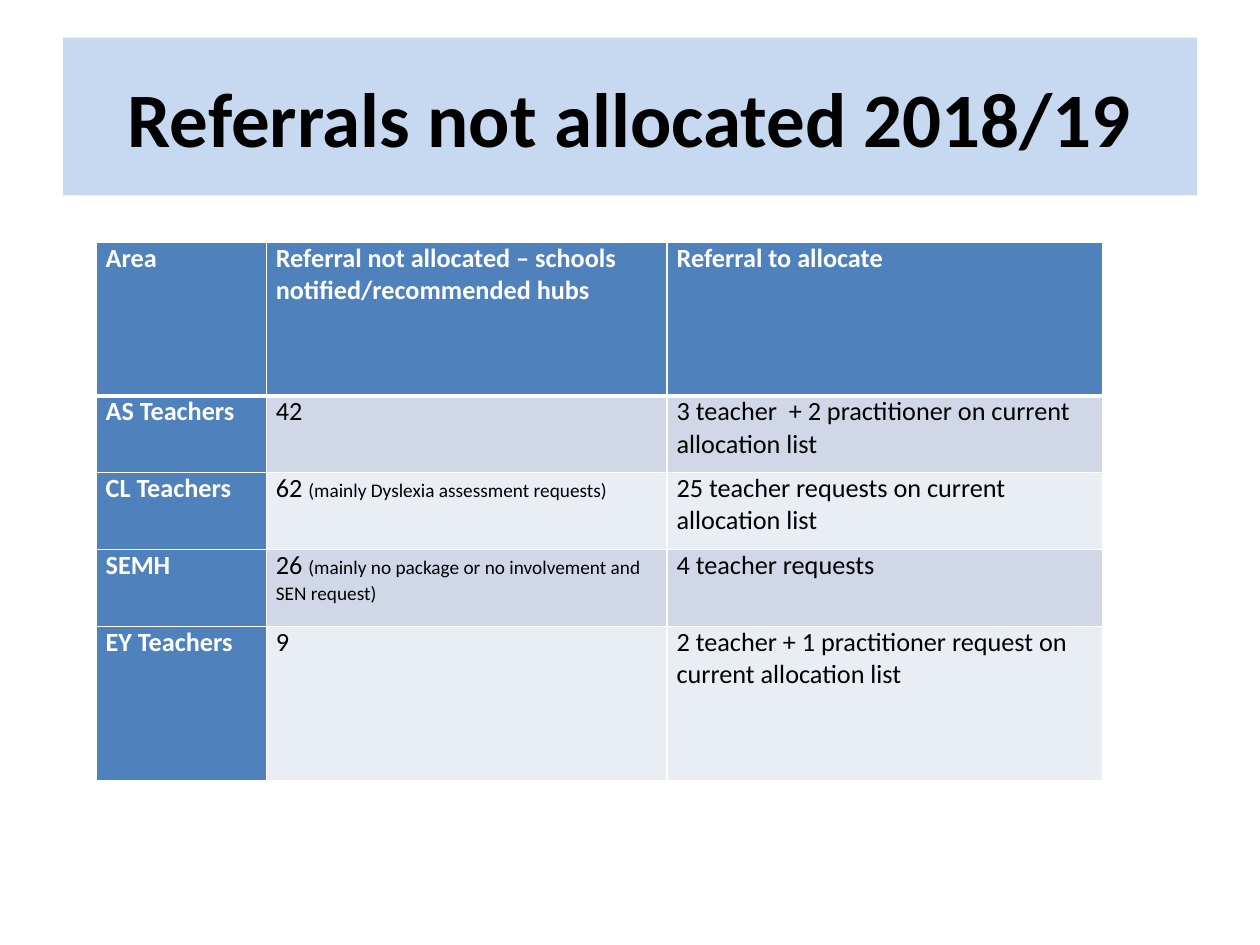
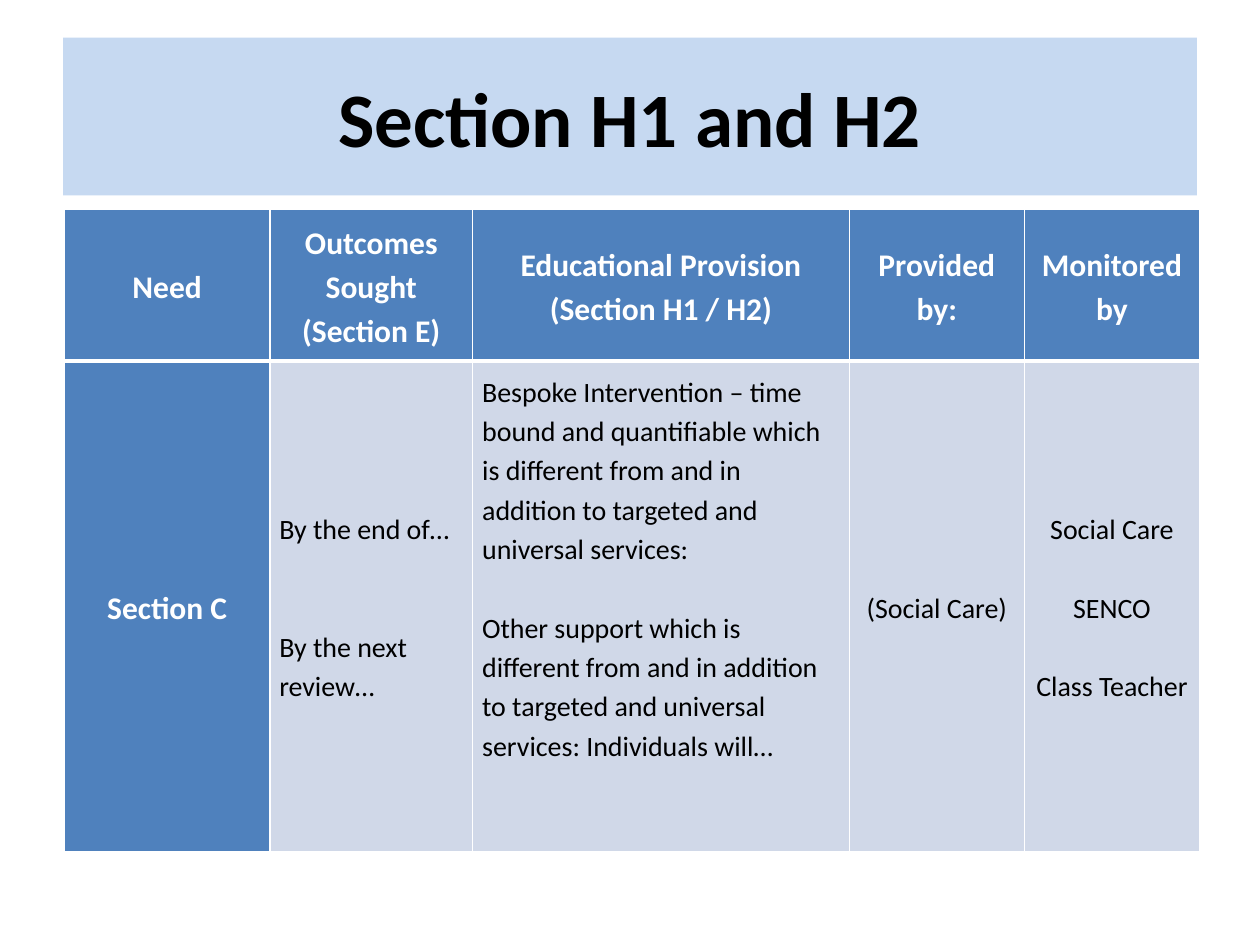
from dataclasses import dataclass
from typing import Any

from lxml.etree import SubElement
from pptx import Presentation
from pptx.dml.color import RGBColor
from pptx.enum.text import MSO_ANCHOR, PP_ALIGN
from pptx.oxml.ns import qn
from pptx.slide import Slide
from pptx.table import _Cell
from pptx.util import Cm, Pt

FONT = "Calibri"
BAND = "C6D9F1"
HEADING = "4F81BD"
STRIPES = ("D0D8E8", "E9EDF4")
WHITE = "FFFFFF"
BLACK = "000000"
INSET = 0.19
SINGLE_LINE = 1.22


@dataclass(frozen=True)
class Run:
    text: str
    size: float | None = None


@dataclass(frozen=True)
class Para:
    runs: tuple[Run, ...]
    lines_before: int = 0


@dataclass(frozen=True)
class Entry:
    paras: tuple[Para, ...]
    centred: bool = False
    lines_below: int = 0


@dataclass(frozen=True)
class Grid:
    left: float
    top: float
    widths: tuple[float, ...]
    heights: tuple[float, ...]
    rows: tuple[tuple[Entry, ...], ...]
    heading_size: float
    body_size: float
    spacing: float
    anchor: MSO_ANCHOR
    inset_vertical: float


@dataclass(frozen=True)
class Page:
    title: str
    grid: Grid


def colour(code: str) -> RGBColor:
    return RGBColor.from_string(code)


def assign(target: Any, values: dict[str, Any]) -> None:
    for name, value in values.items():
        setattr(target, name, value)


def paint(target: Any, code: str) -> None:
    target.fill.solid()
    target.fill.fore_color.rgb = colour(code)


def style_font(font: Any, size: float, code: str, bold: bool) -> None:
    assign(font, {"name": FONT, "size": Pt(size), "bold": bold})
    font.color.rgb = colour(code)


def plain(*lines: str, centred: bool = False, gap: int = 0, lines_below: int = 0) -> Entry:
    paras = tuple(Para((Run(line),), gap if i else 0) for i, line in enumerate(lines))
    return Entry(paras, centred, lines_below)


def noted(count: str, note: str) -> Entry:
    return Entry((Para((Run(f"{count} "), Run(note, 11))),))


def centre(*lines: str, gap: int = 0) -> Entry:
    return plain(*lines, centred=True, gap=gap)


def add_borders(cell: _Cell, row: int) -> None:
    properties = cell._tc.get_or_add_tcPr()
    widths = {"lnL": 1, "lnR": 1, "lnT": 3 if row == 1 else 1, "lnB": 3 if row == 0 else 1}
    for edge, width in widths.items():
        line = SubElement(properties, qn(f"a:{edge}"), w=str(Pt(width)))
        SubElement(SubElement(line, qn("a:solidFill")), qn("a:srgbClr"), val=WHITE)


def fill_cell(cell: _Cell, entry: Entry, grid: Grid, row: int, column: int) -> None:
    heading = row == 0 or column == 0
    size = grid.heading_size if heading else grid.body_size
    line_height = Pt(size * SINGLE_LINE * grid.spacing)
    add_borders(cell, row)
    paint(cell, HEADING if heading else STRIPES[(row - 1) % 2])
    assign(cell, {
        "margin_left": Cm(INSET),
        "margin_right": Cm(INSET),
        "margin_top": Cm(grid.inset_vertical),
        "margin_bottom": Cm(grid.inset_vertical) + entry.lines_below * line_height,
        "vertical_anchor": grid.anchor,
    })
    frame = cell.text_frame
    for i, para in enumerate(entry.paras):
        paragraph = frame.add_paragraph() if i else frame.paragraphs[0]
        assign(paragraph, {
            "alignment": PP_ALIGN.CENTER if entry.centred else PP_ALIGN.LEFT,
            "line_spacing": grid.spacing,
            "space_before": para.lines_before * line_height,
        })
        for piece in para.runs:
            run = paragraph.add_run()
            run.text = piece.text
            style_font(run.font, piece.size or size, WHITE if heading else BLACK, heading)


def add_title(slide: Slide, text: str) -> None:
    title = slide.shapes.title
    assign(title, {"left": Cm(1.27), "top": Cm(0.76), "width": Cm(22.86), "height": Cm(3.18)})
    paint(title, BAND)
    frame = title.text_frame
    assign(frame, {"text": text, "word_wrap": True, "vertical_anchor": MSO_ANCHOR.MIDDLE})
    heading = frame.paragraphs[0]
    heading.alignment = PP_ALIGN.CENTER
    style_font(heading.runs[0].font, 44, BLACK, True)


def add_grid(slide: Slide, grid: Grid) -> None:
    table = slide.shapes.add_table(
        len(grid.heights), len(grid.widths), Cm(grid.left), Cm(grid.top),
        Cm(sum(grid.widths)), Cm(sum(grid.heights)),
    ).table
    for column, width in zip(table.columns, grid.widths):
        column.width = Cm(width)
    for row, height in zip(table.rows, grid.heights):
        row.height = Cm(height)
    for r, entries in enumerate(grid.rows):
        for c, entry in enumerate(entries):
            fill_cell(table.cell(r, c), entry, grid, r, c)


REFERRALS = Grid(
    left=1.94, top=4.88,
    widths=(3.43, 8.08, 8.79),
    heights=(3.1, 1.55, 1.55, 1.55, 3.1),
    rows=(
        (plain("Area"),
         plain("Referral not allocated – schools notified/recommended hubs"),
         plain("Referral to allocate")),
        (plain("AS Teachers"), plain("42"),
         plain("3 teacher  + 2 practitioner on current allocation list")),
        (plain("CL Teachers"), noted("62", "(mainly Dyslexia assessment requests)"),
         plain("25 teacher requests on current allocation list")),
        (plain("SEMH"),
         noted("26", "(mainly no package or no involvement and SEN request)"),
         plain("4 teacher requests")),
        (plain("EY Teachers"), plain("9"),
         plain("2 teacher + 1 practitioner request on current allocation list")),
    ),
    heading_size=15, body_size=15, spacing=1.0,
    anchor=MSO_ANCHOR.TOP, inset_vertical=0,
)

PROVISION = Grid(
    left=1.3, top=4.22,
    widths=(4.14, 4.09, 7.59, 3.53, 3.53),
    heights=(2.67, 9.86),
    rows=(
        (centre("Need"),
         centre("Outcomes Sought", "(Section E)"),
         centre("Educational Provision", "(Section H1 / H2)"),
         centre("Provided by:"),
         centre("Monitored by")),
        (centre("Section C"),
         plain("By the end of…", "By the next review…", gap=2),
         plain(
             "Bespoke Intervention – time bound and quantifiable which is different "
             "from and in addition to targeted and universal services:",
             "Other support which is different from and in addition to targeted and "
             "universal services: Individuals will…",
             gap=1, lines_below=2),
         centre("(Social Care)"),
         centre("Social Care", "SENCO", "Class Teacher", gap=1)),
    ),
    heading_size=18, body_size=16, spacing=1.15,
    anchor=MSO_ANCHOR.MIDDLE, inset_vertical=INSET,
)

PAGES = (
    Page("Referrals not allocated 2018/19", REFERRALS),
    Page("Section H1 and H2", PROVISION),
)


def main() -> None:
    deck = Presentation()
    assign(deck, {"slide_width": Cm(25.4), "slide_height": Cm(19.05)})
    title_only = deck.slide_layouts[5]
    for page in PAGES:
        slide = deck.slides.add_slide(title_only)
        add_title(slide, page.title)
        add_grid(slide, page.grid)
    deck.save("out.pptx")


if __name__ == "__main__":
    main()
